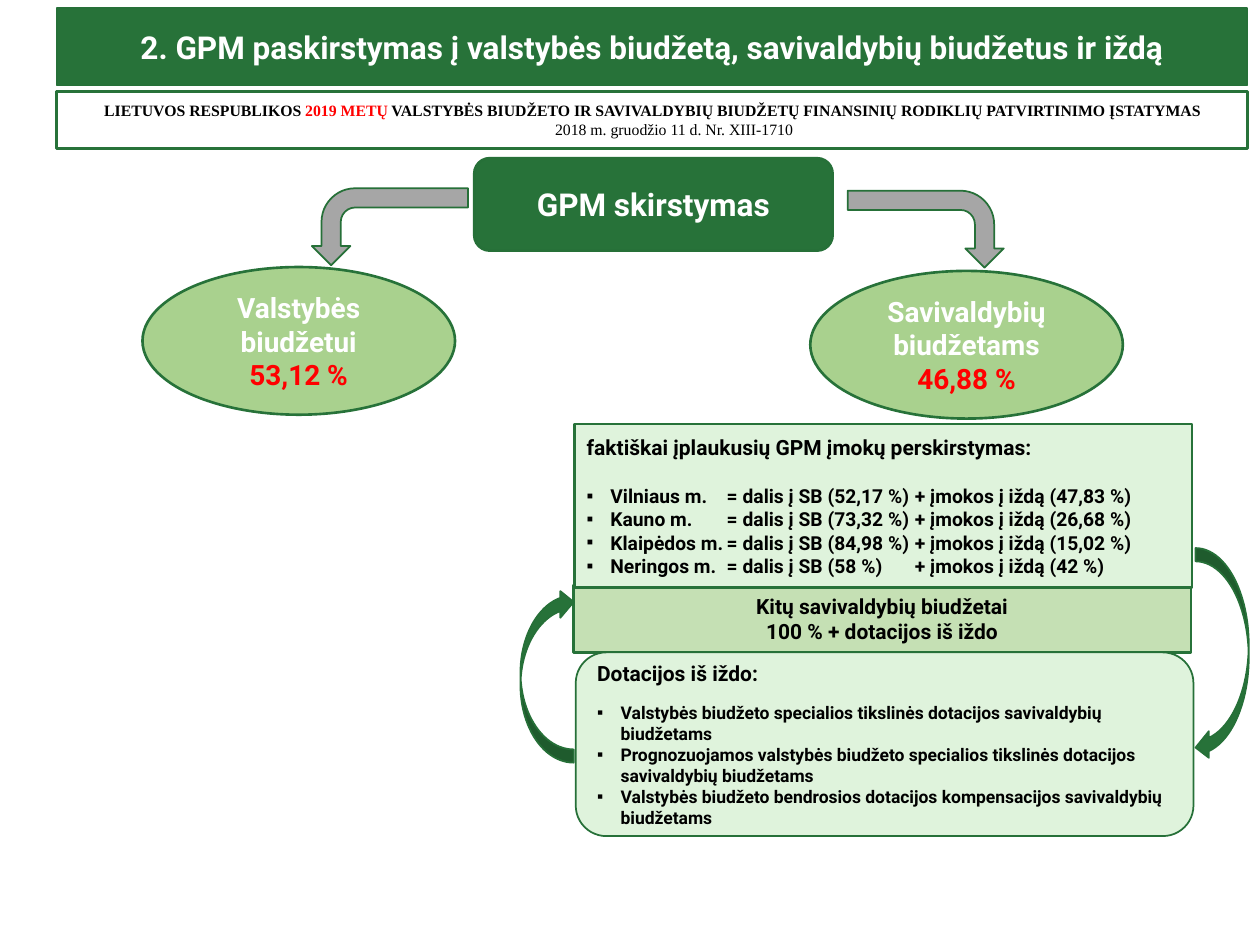
from dataclasses import dataclass

import pptx
import pptx.dml.color
import pptx.enum.shapes
import pptx.enum.text
import pptx.oxml.ns
import pptx.util
from lxml import etree

Pt = pptx.util.Pt
Kind = pptx.enum.shapes.MSO_SHAPE
Align = pptx.enum.text.PP_ALIGN


@dataclass(frozen=True)
class Theme:
    green: str = "277239"
    dark_green: str = "267038"
    leaf: str = "A9D18E"
    sage: str = "C5E0B4"
    mint: str = "DFF3DC"
    grey: str = "A6A6A6"
    white: str = "FFFFFF"
    black: str = "000000"
    red: str = "FF0000"
    font: str = "Roboto"
    law_font: str = "Times New Roman"
    title: int = 18
    share: int = 16
    body: int = 12
    city: int = 11
    grant: int = 10
    law: int = 9


THEME = Theme()


@dataclass(frozen=True)
class Block:
    kind: Kind
    left: float
    top: float
    width: float
    height: float
    fill: str
    line: str = THEME.green
    line_width: float = 1.5
    rotation: int = 0
    flipped: bool = False


@dataclass(frozen=True)
class Share:
    left: float
    top: float
    name: str
    percent: str


@dataclass(frozen=True)
class City:
    name: str
    budget: str
    treasury: str


SHARES = (
    Share(81.4, 152.6, "Valstybės biudžetui", "53,12 %"),
    Share(463, 154.8, "Savivaldybių biudžetams", "46,88 %"),
)
CITIES = (
    City("Vilniaus m.", "52,17 %", "47,83 %"),
    City("Kauno m.", "73,32 %", "26,68 %"),
    City("Klaipėdos m.", "84,98 %", "15,02 %"),
    City("Neringos m.", "58 %", "42 %"),
)
GRANTS = (
    "Valstybės biudžeto specialios tikslinės dotacijos savivaldybių biudžetams",
    "Prognozuojamos valstybės biudžeto specialios tikslinės dotacijos savivaldybių biudžetams",
    "Valstybės biudžeto bendrosios dotacijos kompensacijos savivaldybių biudžetams",
)
CITY_TABS = (80, 187.5)
BULLET_INDENT = 13.5

HEADING = Block(Kind.ROUNDED_RECTANGLE, 271, 90.4, 204.8, 52.8, THEME.green, THEME.dark_green)
OTHERS = Block(Kind.RECTANGLE, 327.6, 334.4, 353, 38.6, THEME.sage)
CITY_BOX = Block(Kind.RECTANGLE, 328.2, 242.4, 353, 93.4, THEME.mint)
GRANT_BOX = Block(Kind.FLOWCHART_ALTERNATE_PROCESS, 329, 372.8, 353, 105, THEME.mint,
                  THEME.dark_green, 1)
TITLE = Block(Kind.RECTANGLE, 32.4, 4.5, 680.4, 44.4, THEME.green, THEME.dark_green, 1)
LAW = Block(Kind.RECTANGLE, 32.4, 52.4, 680.4, 32.4, THEME.white)
ARROWS = (
    Block(Kind.BENT_ARROW, 507, 86.4, 44, 89.2, THEME.grey, THEME.dark_green, 1, 90),
    Block(Kind.BENT_ARROW, 200.8, 85, 44, 89.2, THEME.grey, THEME.dark_green, 1, 90, True),
    Block(Kind.CURVED_LEFT_ARROW, 683.2, 313.2, 30.4, 121.6, THEME.green, THEME.dark_green, 1),
    Block(Kind.CURVED_LEFT_ARROW, 297.4, 336.4, 30.4, 99.4, THEME.green, THEME.dark_green, 1, 180),
)


def rgb(value: str) -> pptx.dml.color.RGBColor:
    return pptx.dml.color.RGBColor.from_string(value)


def add_block(slide, block: Block):
    shape = slide.shapes.add_shape(
        block.kind, Pt(block.left), Pt(block.top), Pt(block.width), Pt(block.height))
    shape.shadow.inherit = False
    shape.fill.solid()
    shape.fill.fore_color.rgb = rgb(block.fill)
    shape.line.color.rgb = rgb(block.line)
    shape.line.width = Pt(block.line_width)
    shape.rotation = block.rotation
    if block.flipped:
        shape.element.spPr.xfrm.set("flipV", "1")
    shape.text_frame.word_wrap = True
    shape.text_frame.vertical_anchor = pptx.enum.text.MSO_ANCHOR.MIDDLE
    return shape


def write(shape, text: str, *, size: float = THEME.body, color: str = THEME.black,
          bold: bool = True, font: str = THEME.font, align: Align = Align.CENTER,
          before: float = 0, indent: float = 0, bullet: str = "",
          tabs: tuple[float, ...] = (), same_paragraph: bool = False) -> None:
    """Add text as a new paragraph, or as a further run of the last one."""
    frame = shape.text_frame
    paragraph = frame.paragraphs[-1]
    if not same_paragraph:
        if paragraph.runs:
            paragraph = frame.add_paragraph()
        paragraph.alignment = align
        if before:
            paragraph.space_before = Pt(before)
        properties = paragraph._p.get_or_add_pPr()
        qn = pptx.oxml.ns.qn
        if indent:
            properties.set("marL", str(Pt(indent)))
        if bullet:
            properties.set("indent", str(-Pt(indent)))
            etree.SubElement(properties, qn("a:buFont"), typeface="Arial")
            etree.SubElement(properties, qn("a:buChar"), char=bullet)
        if tabs:
            tab_list = etree.SubElement(properties, qn("a:tabLst"))
            for position in tabs:
                etree.SubElement(tab_list, qn("a:tab"), pos=str(Pt(position)), algn="l")
    run = paragraph.add_run()
    run.text = text
    run.font.name = font
    run.font.size = Pt(size)
    run.font.bold = bold
    run.font.color.rgb = rgb(color)


def add_share(slide, share: Share) -> None:
    ellipse = add_block(slide, Block(Kind.OVAL, share.left, share.top, 178.6, 84.4, THEME.leaf))
    write(ellipse, share.name, size=THEME.share, color=THEME.white)
    write(ellipse, share.percent, size=THEME.share, color=THEME.red)


def add_list(slide, block: Block, heading: str, items: list[str], *, size: float,
             gap: float, tabs: tuple[float, ...] = ()) -> None:
    box = add_block(slide, block)
    write(box, heading, align=Align.LEFT)
    for index, item in enumerate(items):
        write(box, item, size=size, align=Align.LEFT, before=0 if index else gap,
              indent=BULLET_INDENT, bullet="▪", tabs=tabs)


def main() -> None:
    presentation = pptx.Presentation()
    presentation.slide_width, presentation.slide_height = Pt(720), Pt(540)
    slide = presentation.slides.add_slide(presentation.slide_layouts[6])

    write(add_block(slide, HEADING), "GPM skirstymas", size=THEME.title, color=THEME.white)
    for share in SHARES:
        add_share(slide, share)

    others = add_block(slide, OTHERS)
    write(others, "Kitų savivaldybių biudžetai")
    write(others, "100 % + dotacijos iš iždo")
    cities = [f"{city.name}\t= dalis į SB ({city.budget})\t+ įmokos į iždą ({city.treasury})"
              for city in CITIES]
    add_list(slide, CITY_BOX, "faktiškai įplaukusių GPM įmokų perskirstymas:", cities,
             size=THEME.city, gap=14, tabs=CITY_TABS)
    add_list(slide, GRANT_BOX, "Dotacijos iš iždo:", list(GRANTS), size=THEME.grant, gap=9.4)

    write(add_block(slide, TITLE),
          "2. GPM paskirstymas į valstybės biudžetą, savivaldybių biudžetus ir iždą",
          size=THEME.title, color=THEME.white)
    for arrow in ARROWS:
        add_block(slide, arrow)

    law = add_block(slide, LAW)
    law_format = {"size": THEME.law, "font": THEME.law_font}
    write(law, "LIETUVOS RESPUBLIKOS ", **law_format)
    write(law, "2019 METŲ", color=THEME.red, same_paragraph=True, **law_format)
    write(law, " VALSTYBĖS BIUDŽETO IR SAVIVALDYBIŲ BIUDŽETŲ FINANSINIŲ RODIKLIŲ "
          "PATVIRTINIMO ĮSTATYMAS", same_paragraph=True, **law_format)
    write(law, "2018 m. gruodžio 11 d. Nr. XIII-1710", bold=False, indent=25, **law_format)

    presentation.save("out.pptx")


if __name__ == "__main__":
    main()
